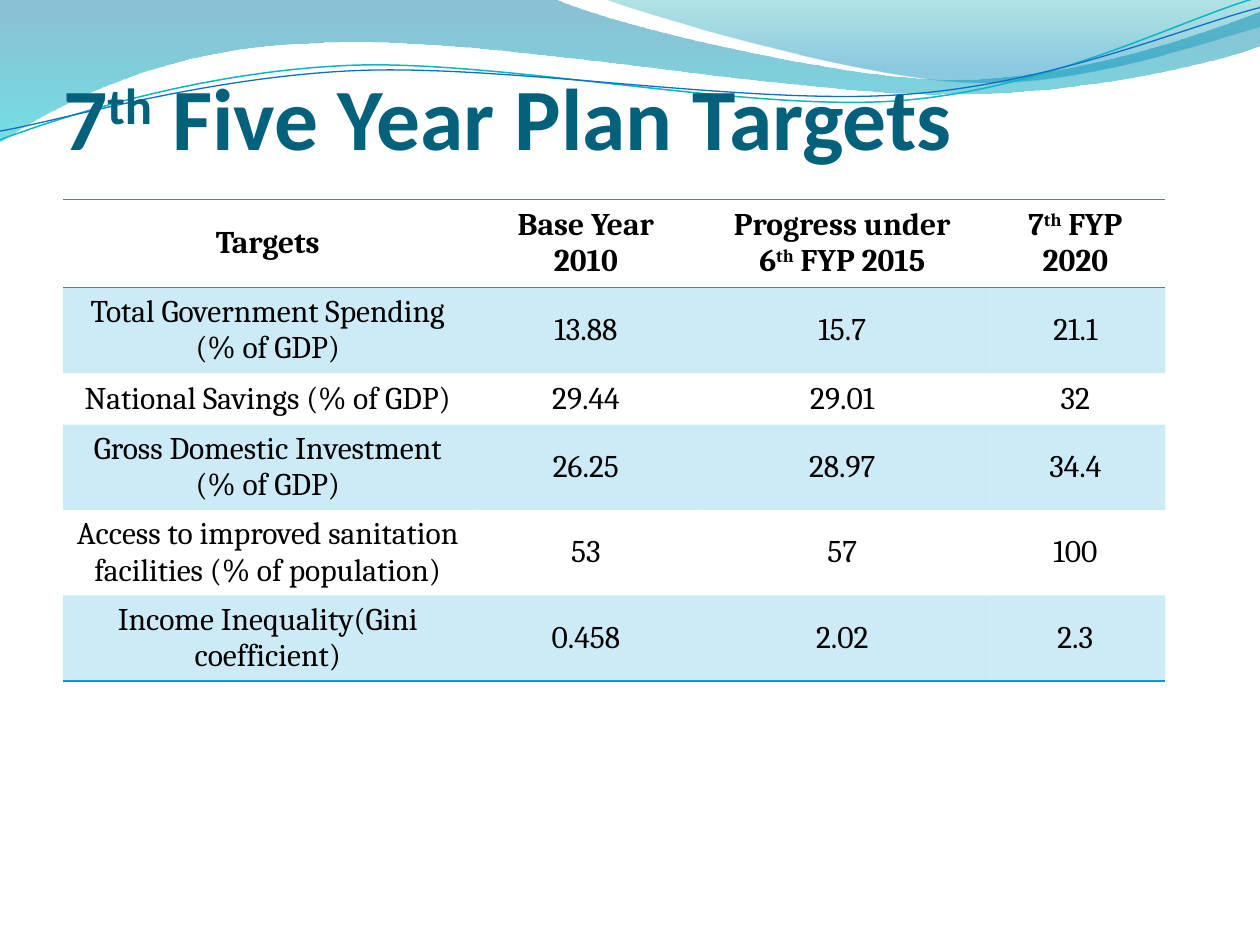
from lxml.etree import SubElement
from pptx import Presentation
from pptx.dml.color import RGBColor
from pptx.enum.text import MSO_ANCHOR, MSO_AUTO_SIZE, PP_ALIGN
from pptx.oxml.ns import qn
from pptx.util import Pt

TITLE = RGBColor(0x04, 0x61, 0x7B)
BLACK = RGBColor(0x00, 0x00, 0x00)
BLUE = RGBColor(0x00, 0x9D, 0xD9)
DEEP = RGBColor(0x00, 0x74, 0xA1)
CYAN = RGBColor(0x00, 0xC6, 0xCF)
TEAL = RGBColor(0x00, 0xA1, 0xA9)
SKY = RGBColor(0x00, 0x8B, 0xBF)
AQUA = RGBColor(0x0A, 0xB8, 0xBF)
ROYAL = RGBColor(0x0F, 0x6F, 0xC6)
NO_STYLE = "{2D5ABB26-0587-4C30-8999-92F81FD0307C}"

# Outlines in points: a pair is a corner, six numbers are a cubic curve
WAVE = [(0, 0), (316.8, -0.7),
        (342.7, 12.2, 478.1, 45.4, 545.8, 45.4),
        (614.2, 45.4, 689.8, 18.7, 720, 6.5), (720.7, 25.9),
        (707.8, 31.7, 626.4, 54.7, 537.1, 54),
        (447.8, 54, 275, 20.2, 185, 24.5),
        (92.9, 25.9, 33.1, 59.8, -0.7, 81.4)]
CREST = [(344.9, -0.7), (366.5, 7.9, 491, 44.6, 553.7, 46.8),
         (616.3, 49.7, 691.9, 23, 720, 15.1), (720, 0)]
UPPER = [(0, 79.9), (34.6, 67, 113.8, 41, 199.4, 37.4),
         (284.4, 33.8, 427, 64.1, 513.4, 57.6),
         (599.8, 51.1, 675.4, 10.8, 718.6, -1.4)]
LOWER = [(0, 74.9), (33.8, 69.1, 118.1, 43.9, 203.8, 40.3),
         (290.2, 36.7, 429.8, 60.5, 516.2, 54),
         (601.9, 48.2, 677.5, 15.1, 720, 4.3)]

# A caret pair marks superscript, a line break starts a paragraph
ROWS = [
    ("Targets", "Base Year\n2010", "Progress under\n6^th^ FYP 2015",
     "7^th^ FYP\n2020"),
    ("Total Government Spending (% of GDP)", "13.88", "15.7", "21.1"),
    ("National Savings (% of GDP)", "29.44", "29.01", "32"),
    ("Gross Domestic Investment (% of GDP)", "26.25", "28.97", "34.4"),
    ("Access to improved sanitation facilities (% of population)",
     "53", "57", "100"),
    ("Income Inequality(Gini coefficient)", "0.458", "2.02", "2.3"),
]
WIDTHS = [234, 129.6, 163.4, 103]


def write(frame, text, font="Cambria", size=18, color=BLACK, bold=False,
          align=PP_ALIGN.CENTER):
    for i, line in enumerate(text.split("\n")):
        para = frame.add_paragraph() if i else frame.paragraphs[0]
        para.alignment = align
        for j, part in enumerate(line.split("^")):
            if not part:
                continue
            run = para.add_run()
            run.text = part
            run.font.name, run.font.size = font, Pt(size)
            run.font.bold, run.font.color.rgb = bold, color
            if j % 2:
                run.font._element.set("baseline", "30000")


def fade(node, *shares):
    """Give each colour under node its opacity in percent."""
    for color, share in zip(list(node.iter(qn("a:srgbClr"))), shares):
        SubElement(color, qn("a:alpha")).set("val", str(share * 1000))


def draw(slide, outline, close):
    """Join the end points, then bend the sides that are curves."""
    ends = [(Pt(part[-2]), Pt(part[-1])) for part in outline]
    pen = slide.shapes.build_freeform(*ends[0])
    pen.add_line_segments(ends[1:], close=close)
    shape = pen.convert_to_shape()
    shape.shadow.inherit = False
    sides = list(shape._element.iter(qn("a:lnTo")))
    for side, part in zip(sides, outline[1:]):
        if len(part) == 2:
            continue
        bend = side.makeelement(qn("a:cubicBezTo"))
        for x, y in zip(part[::2], part[1::2]):
            dot = SubElement(bend, qn("a:pt"))
            dot.set("x", str(Pt(x) - shape.left))
            dot.set("y", str(Pt(y) - shape.top))
        side.getparent().replace(side, bend)
    return shape


def band(slide, outline, colors, shares, end):
    shape = draw(slide, outline, True)
    shape.line.fill.background()
    shape.fill.gradient()
    shape.fill.gradient_angle = 270
    for stop, color, place in zip(shape.fill.gradient_stops, colors, (0, end)):
        stop.color.rgb, stop.position = color, place
    fade(shape._element, *shares)


def curve(slide, outline, color, width):
    shape = draw(slide, outline, False)
    shape.fill.background()
    shape.line.color.rgb, shape.line.width = color, Pt(width)


def head(slide, text):
    title = slide.shapes.title
    slide.shapes._spTree.append(title._element)  # in front of the waves
    title.left, title.top = Pt(36), Pt(30)
    title.width, title.height = Pt(648), Pt(66)
    frame = title.text_frame
    frame.auto_size = MSO_AUTO_SIZE.NONE
    frame.word_wrap = True
    frame.vertical_anchor = MSO_ANCHOR.BOTTOM
    frame.margin_left = frame.margin_right = frame.margin_bottom = 0
    frame.margin_top = Pt(3.6)
    write(frame, text, font="Calibri", size=50, color=TITLE, bold=True,
          align=PP_ALIGN.LEFT)


def rule(cell, *sides):
    props = cell._tc.get_or_add_tcPr()
    for i, side in enumerate(sides):
        line = props.makeelement(qn("a:" + side), {"w": str(Pt(1))})
        fill = SubElement(line, qn("a:solidFill"))
        SubElement(fill, qn("a:srgbClr")).set("val", str(BLUE))
        props.insert(i, line)


def grid(slide):
    box = slide.shapes.add_table(len(ROWS), len(WIDTHS), Pt(36), Pt(114),
                                 Pt(630), Pt(324))
    table = box.table
    table._tbl.tblPr.find(qn("a:tableStyleId")).text = NO_STYLE
    table.horz_banding = False
    for col, width in zip(table.columns, WIDTHS):
        col.width = Pt(width)
    for r, row in enumerate(ROWS):
        table.rows[r].height = Pt(29.5 if r else 50.4)
        for c, text in enumerate(row):
            cell = table.cell(r, c)
            cell.vertical_anchor = MSO_ANCHOR.MIDDLE
            write(cell.text_frame, text, bold=r == 0)
            if r % 2:
                cell.fill.solid()
                cell.fill.fore_color.rgb = BLUE
                fade(cell._tc.tcPr, 20)
            else:
                cell.fill.background()
            if r == 0:
                rule(cell, "lnT", "lnB")
            elif r == len(ROWS) - 1:
                rule(cell, "lnB")
    box.height = Pt(324)


def main():
    deck = Presentation()
    deck.slide_width, deck.slide_height = Pt(720), Pt(540)
    slide = deck.slides.add_slide(deck.slide_layouts[5])
    # Waves along the top edge
    band(slide, WAVE, (DEEP, CYAN), (45, 55), 1)
    band(slide, CREST, (TEAL, SKY), (30, 45), 0.8)
    curve(slide, UPPER, AQUA, 0.85)
    curve(slide, LOWER, ROYAL, 0.75)
    # Title and targets
    head(slide, "7^th^ Five Year Plan Targets")
    grid(slide)
    deck.save("out.pptx")


if __name__ == "__main__":
    main()
